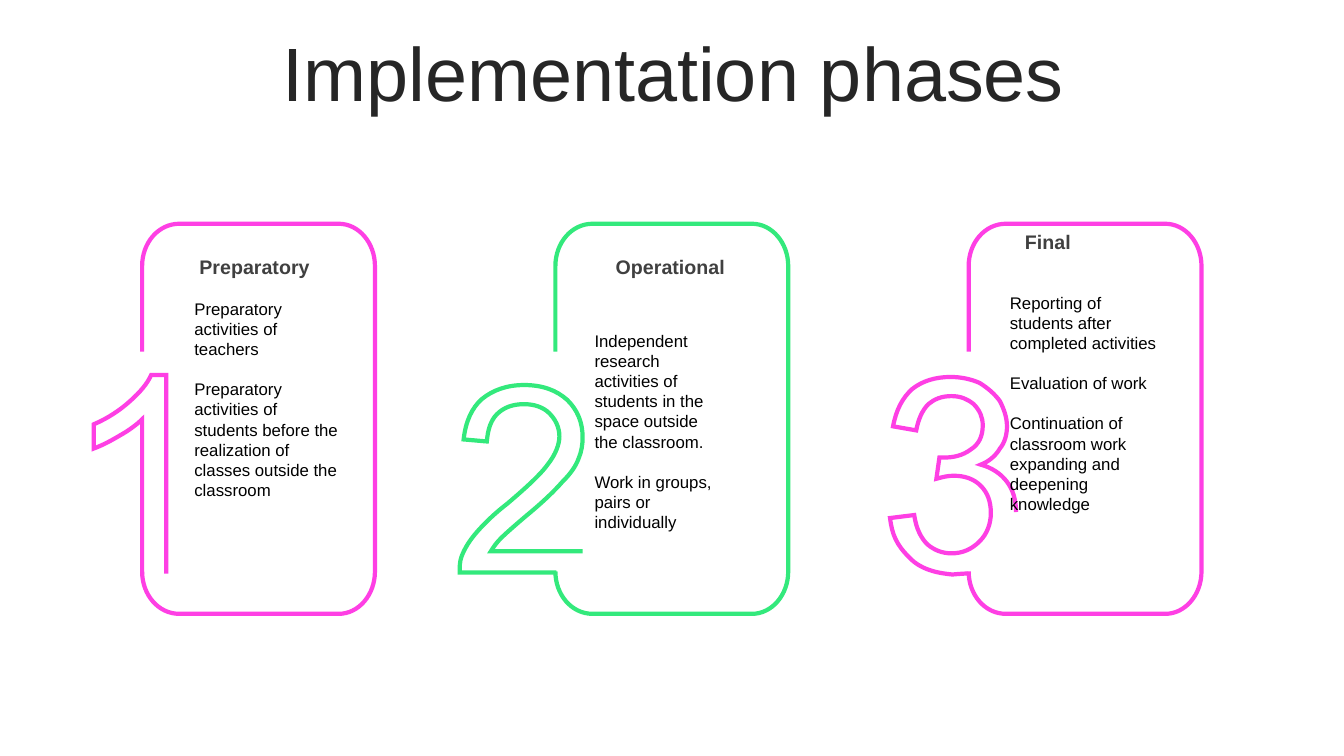
from lxml import etree
from pptx import Presentation
from pptx.dml.color import RGBColor
from pptx.enum.text import MSO_ANCHOR, PP_ALIGN
from pptx.oxml.ns import qn
from pptx.util import Pt

PX = 9144  # EMU in one px, 100 px to the inch
PAGE_HEIGHT = 750
MIDDLE = MSO_ANCHOR.MIDDLE
LEFT, CENTER = PP_ALIGN.LEFT, PP_ALIGN.CENTER
FONT = "Arial"
COLORS = {"white": "FFFFFF", "pink": "FE3FE4", "green": "33E97C",
          "title": "262626", "heading": "404040", "body": "000000"}
CARD_LEFT, CARD_PITCH = 141, 410

# Outlines: a pair is a corner, six numbers are a cubic curve
CARD = [(0, 567), (0, 590, 16, 609, 37, 609), (195, 609),
        (215, 609, 231, 590, 231, 567), (231, 264),
        (231, 241, 215, 222, 195, 222), (37, 222),
        (16, 222, 0, 241, 0, 264), (0, 349)]
ONE = [(141, 569), (141, 416), (136, 421, 128, 427, 119, 432),
       (109, 438, 101, 442, 93, 445), (93, 421),
       (107, 415, 119, 407, 129, 398), (139, 389, 146, 381, 150, 372),
       (165, 372), (165, 569)]
TWO = [(552, 568), (456, 568), (456, 563, 456, 557, 458, 552),
       (461, 544, 466, 536, 473, 528), (480, 520, 490, 510, 503, 500),
       (523, 483, 537, 470, 544, 460), (551, 451, 555, 441, 555, 433),
       (555, 424, 551, 416, 545, 410), (539, 404, 530, 401, 520, 401),
       (509, 401, 500, 404, 493, 411), (487, 417, 484, 426, 483, 438),
       (460, 436), (462, 418, 468, 405, 478, 396),
       (489, 387, 503, 382, 520, 382), (538, 382, 552, 387, 563, 397),
       (573, 407, 578, 419, 578, 434), (578, 441, 577, 448, 574, 455),
       (571, 463, 566, 470, 558, 478), (551, 486, 540, 497, 523, 511),
       (510, 522, 501, 530, 497, 534), (493, 538, 490, 542, 487, 547),
       (578, 547)]
THREE = [(961, 569), (961, 569, 955, 569, 945, 570),
         (935, 569, 915, 567, 902, 553), (889, 540, 885, 530, 883, 514),
         (907, 511), (909, 525, 914, 534, 920, 540),
         (927, 546, 935, 549, 944, 549), (955, 549, 964, 545, 972, 537),
         (979, 530, 983, 520, 983, 509), (983, 498, 980, 489, 973, 482),
         (966, 475, 957, 472, 946, 472), (941, 472, 936, 473, 929, 475),
         (932, 454), (934, 454, 935, 454, 936, 454),
         (946, 454, 955, 452, 963, 446), (971, 441, 975, 433, 975, 422),
         (975, 414, 972, 407, 966, 401), (960, 396, 953, 393, 944, 393),
         (934, 393, 927, 396, 921, 401), (915, 407, 911, 416, 909, 427),
         (886, 423), (889, 407, 895, 395, 905, 386),
         (915, 378, 928, 374, 943, 374), (953, 374, 963, 376, 972, 380),
         (980, 385, 987, 391, 992, 398), (996, 406, 999, 414, 999, 423),
         (999, 431, 997, 439, 992, 445), (988, 452, 981, 458, 973, 461),
         (984, 464, 993, 470, 999, 478), (1005, 486, 1008, 496, 1008, 508)]

# Color, digit, heading with its box, body paragraphs with their box
PHASES = [
    ("pink", ONE, "Preparatory", (188, 248, 158, 34),
     ["Preparatory activities of teachers",
      "Preparatory activities of students before the realization of "
      "classes outside the classroom"], (183, 291, 164, 212)),
    ("green", TWO, "Operational", (601, 248, 158, 34),
     ["Independent research activities of students in the space outside "
      "the classroom.",
      "Work in groups, pairs or individually"], (580, 323, 147, 212)),
    ("pink", THREE, "Final", (1007, 223, 158, 34),
     ["Reporting of students after completed activities",
      "Evaluation of work",
      "Continuation of classroom work expanding and deepening knowledge"],
     (992, 285, 172, 232)),
]


def rgb(name):
    return RGBColor.from_string(COLORS[name])


def bend_curves(shape, outline):
    """Join each three line segments that stand for a curve into one."""
    segments = iter(list(shape._element.iter(qn("a:lnTo"))))
    for step in outline[1:]:
        first = next(segments)
        if len(step) == 2:
            continue
        curve = etree.Element(qn("a:cubicBezTo"))
        first.addprevious(curve)
        for segment in (first, next(segments), next(segments)):
            curve.append(segment[0])
            segment.getparent().remove(segment)


def add_outline(page, outline, color, left=0, fill=None):
    points = [(left + step[i], step[i + 1])
              for step in outline for i in range(0, len(step), 2)]
    builder = page.shapes.build_freeform(*points[0], scale=PX)
    builder.add_line_segments(points[1:], close=False)
    shape = builder.convert_to_shape()
    bend_curves(shape, outline)
    shape.shadow.inherit = False
    if fill:
        shape.fill.solid()
        shape.fill.fore_color.rgb = rgb(fill)
    else:
        shape.fill.background()
    shape.line.color.rgb = rgb(color)
    shape.line.width = Pt(3)
    # Sharp corners
    etree.SubElement(shape.line._ln, qn("a:miter"), lim="800000")


def add_text(page, place, texts, size, color, bold=False, align=LEFT, gap=0):
    box = page.shapes.add_textbox(*(value * PX for value in place))
    frame = box.text_frame
    frame.word_wrap = True
    for index, text in enumerate(texts):
        para = frame.add_paragraph() if index else frame.paragraphs[0]
        para.alignment = align
        if index:
            para.space_before = Pt(gap)
        span = para.add_run()
        span.text = text
        span.font.name = FONT
        span.font.size = Pt(size)
        span.font.bold = bold
        span.font.color.rgb = rgb(color)
    return frame


def add_title(page, text):
    frame = add_text(page, (35, 37, 1266, 79), [text], 54, "title", align=CENTER)
    frame.vertical_anchor = MIDDLE
    frame.paragraphs[0].line_spacing = 0.9


def main():
    deck = Presentation()
    deck.slide_height = PAGE_HEIGHT * PX
    deck.slide_width = PAGE_HEIGHT * PX * 16 // 9
    page = deck.slides.add_slide(deck.slide_layouts[6])
    page.background.fill.solid()
    page.background.fill.fore_color.rgb = rgb("white")

    add_title(page, "Implementation phases")

    # Cards with their digits and texts
    for index, (color, digit, heading, heading_at, body, body_at) in enumerate(PHASES):
        add_outline(page, CARD, color, CARD_LEFT + index * CARD_PITCH, "white")
        add_outline(page, digit, color)
        add_text(page, heading_at, [heading], 14, "heading", bold=True)
        add_text(page, body_at, body, 12, "body", gap=14.4)

    deck.save("out.pptx")


if __name__ == "__main__":
    main()
